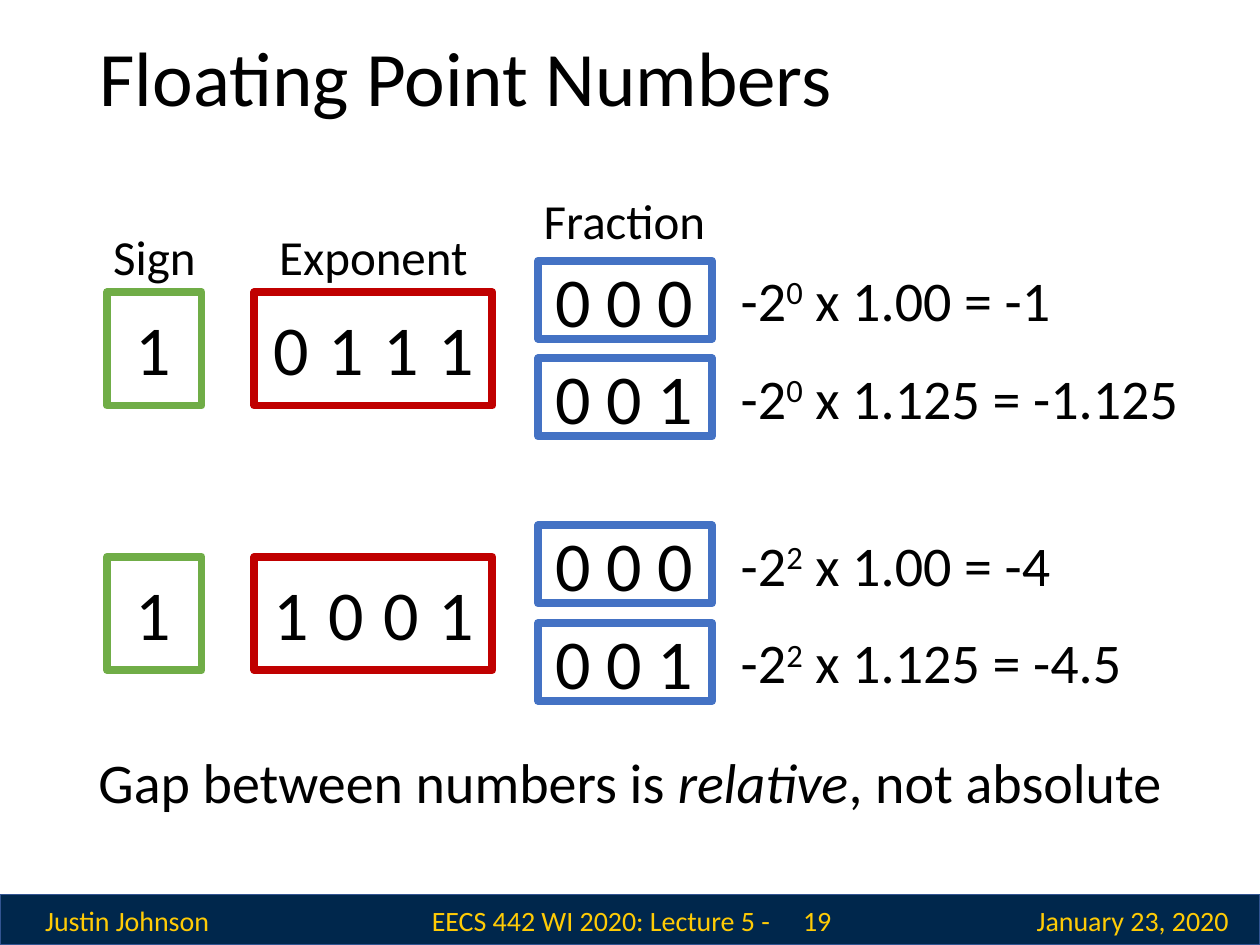
"""Build a slide on the gaps between floating point numbers."""
from pptx import Presentation
from pptx.dml.color import RGBColor
from pptx.enum.shapes import MSO_SHAPE
from pptx.enum.text import MSO_ANCHOR, MSO_AUTO_SIZE, PP_ALIGN
from pptx.util import Pt

RECT = MSO_SHAPE.RECTANGLE
TOP, MIDDLE = MSO_ANCHOR.TOP, MSO_ANCHOR.MIDDLE
LEFT, CENTER = PP_ALIGN.LEFT, PP_ALIGN.CENTER
FIXED = MSO_AUTO_SIZE.NONE
BLACK = RGBColor(0x00, 0x00, 0x00)
NAVY = RGBColor(0x00, 0x27, 0x4C)
EDGE = RGBColor(0x32, 0x54, 0x91)
MAIZE = RGBColor(0xFF, 0xCB, 0x05)
GREEN = RGBColor(0x70, 0xAD, 0x47)
RED = RGBColor(0xC0, 0x00, 0x00)
BLUE = RGBColor(0x44, 0x72, 0xC4)


def write(box, runs, size, color=BLACK, align=CENTER, anchor=TOP):
    frame = box.text_frame
    frame.word_wrap = True
    frame.auto_size = FIXED
    frame.vertical_anchor = anchor
    para = frame.paragraphs[0]
    para.alignment = align
    for text, style in runs:
        run = para.add_run()
        run.text = text
        run.font.name = "Calibri"
        run.font.size = Pt(size)
        run.font.color.rgb = color
        if style == "italic":
            run.font.italic = True
        if style == "super":
            run._r.get_or_add_rPr().set("baseline", "30000")
    return para


def frame_bits(bits, start, step, drop, left, top, width, height, color):
    for i, bit in enumerate(bits):
        box = slide.shapes.add_textbox(
            Pt(start + i * step), Pt(top + drop), Pt(40.3), Pt(55.7))
        write(box, [(bit, "")], 40)
    rect = slide.shapes.add_shape(RECT, Pt(left), Pt(top), Pt(width), Pt(height))
    rect.shadow.inherit = False
    rect.fill.background()
    rect.line.color.rgb = color
    rect.line.width = Pt(4.5)


deck = Presentation()
deck.slide_width, deck.slide_height = Pt(720), Pt(540)
slide = deck.slides.add_slide(deck.slide_layouts[5])

bar = slide.shapes.add_shape(RECT, Pt(0), Pt(511.2), Pt(720), Pt(28.8))
bar.shadow.inherit = False
bar.fill.solid()
bar.fill.fore_color.rgb = NAVY
bar.line.color.rgb = EDGE
bar.line.width = Pt(1)

for text, left, width in [
    ("Justin Johnson", 0.7, 144),
    ("January 23, 2020", 575.3, 144),
    ("EECS 442 WI 2020: Lecture 5 - ", 237.6, 215.3),
    ("19", 435.5, 63),
]:
    box = slide.shapes.add_textbox(Pt(left), Pt(512), Pt(width), Pt(27.5))
    write(box, [(text, "")], 16, MAIZE, CENTER, MIDDLE)

title = slide.shapes.title
title.left, title.top = Pt(49.7), Pt(14.4)
title.width, title.height = Pt(620.6), Pt(64.8)
para = write(title, [("Floating Point Numbers", "")], 44, BLACK, LEFT, MIDDLE)
para.line_spacing = 0.9

for text, left, top, width in [
    ("Sign", 48.2, 126, 80),
    ("Exponent", 145.4, 126, 136),
    ("Fraction", 257.8, 105.1, 198),
]:
    box = slide.shapes.add_textbox(Pt(left), Pt(top), Pt(width), Pt(41))
    write(box, [(text, "")], 28)

for top, bits, power, sums in [
    (167, "0111", "0", ["1.00 = -1", "1.125 = -1.125"]),
    (318.2, "1001", "2", ["1.00 = -4", "1.125 = -4.5"]),
]:
    frame_bits("1", 67.7, 0, 4.3, 61.2, top, 54, 64.8, GREEN)
    frame_bits(bits, 146.2, 31.5, 4.3, 145.4, top, 136, 64.8, RED)
    for i, (part, total) in enumerate(zip(["000", "001"], sums)):
        y = top - 18 + i * 55.8
        frame_bits(part, 307.5, 29.2, -5.6, 307.5, y, 99.4, 44.6, BLUE)
        box = slide.shapes.add_textbox(Pt(416.2), Pt(y - 0.7), Pt(314.6), Pt(46))
        write(box, [("-2", ""), (power, "super"), (" x " + total, "")], 32,
              align=LEFT)

box = slide.shapes.add_textbox(Pt(15.1), Pt(423.4), Pt(689.8), Pt(46))
write(box, [("Gap between numbers is ", ""), ("relative", "italic"),
            (", not absolute", "")], 32)

deck.save("out.pptx")
